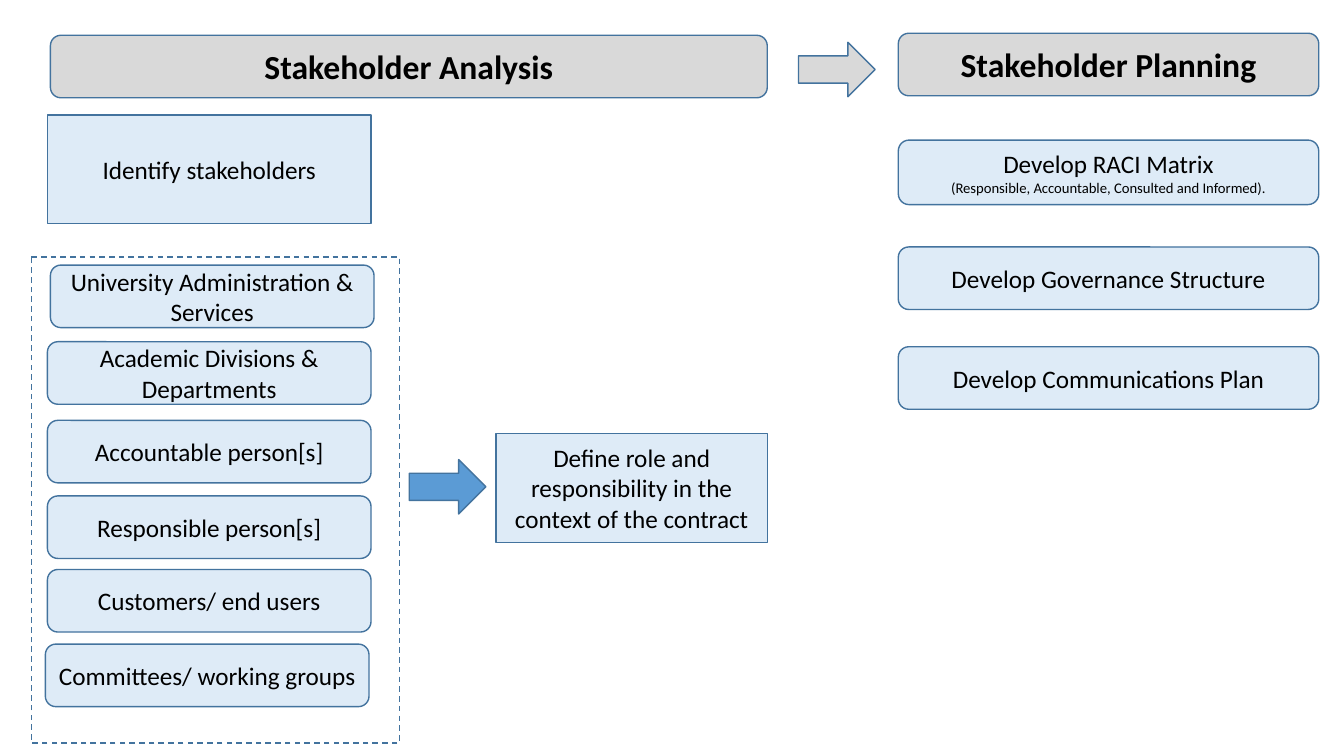
from dataclasses import dataclass

import pptx
import pptx.dml.color
import pptx.enum.dml
import pptx.enum.shapes
import pptx.enum.text
import pptx.util

PX = 9144  # EMU in one px, at 100 px to the inch
SHAPE = pptx.enum.shapes.MSO_SHAPE
FONT = "Calibri"
BLACK, OUTLINE = "000000", "43739E"
PALE_BLUE, BLUE, GREY = "DEEBF7", "5B9BD5", "D9D9D9"

GROUP_WIDTH, BAR_HEIGHT = 321, 62
PLANNING_LEFT, PLANNING_WIDTH = 891, 417
ARROW_WIDTH, ARROW_HEIGHT = 76, 54


@dataclass(frozen=True)
class Box:
    left: int
    top: int
    width: int
    height: int = BAR_HEIGHT
    text: str = ""
    note: str = ""
    kind: SHAPE = SHAPE.ROUNDED_RECTANGLE
    fill: str | None = PALE_BLUE
    size: int = 18
    bold: bool = False
    dashed: bool = False


def heading(left: int, top: int, width: int, text: str) -> Box:
    return Box(left, top, width, text=text, fill=GREY, size=24, bold=True)


def process(left: int, top: int, width: int, text: str) -> Box:
    return Box(left, top, width, 108, text, kind=SHAPE.FLOWCHART_PROCESS)


def arrow(left: int, top: int, fill: str) -> Box:
    return Box(left, top, ARROW_WIDTH, ARROW_HEIGHT, kind=SHAPE.RIGHT_ARROW, fill=fill)


def group(left: int, top: int, text: str) -> Box:
    """Describe one bar in the list of stakeholder groups."""
    return Box(left, top, GROUP_WIDTH, text=text)


def plan(top: int, text: str, note: str = "", height: int = BAR_HEIGHT) -> Box:
    """Describe one bar in the planning column."""
    return Box(PLANNING_LEFT, top, PLANNING_WIDTH, height, text, note)


BOXES = [
    Box(31, 255, 365, 482, kind=SHAPE.FLOWCHART_PROCESS, fill=None, dashed=True),
    process(47, 114, GROUP_WIDTH, "Identify stakeholders"),
    process(492, 430, 269, "Define role and responsibility in the context of the contract"),
    arrow(406, 456, BLUE),
    group(50, 263, "University Administration & Services"),
    group(47, 339, "Academic Divisions & Departments"),
    group(47, 417, "Accountable person[s]"),
    group(47, 492, "Responsible person[s]"),
    group(47, 565, "Customers/ end users"),
    group(45, 639, "Committees/ working groups"),
    heading(50, 35, 711, "Stakeholder Analysis"),
    arrow(792, 42, GREY),
    heading(PLANNING_LEFT, 33, PLANNING_WIDTH, "Stakeholder Planning"),
    plan(139, "Develop RACI Matrix",
         "(Responsible, Accountable, Consulted and Informed).", height=64),
    plan(245, "Develop Governance Structure"),
    plan(344, "Develop Communications Plan"),
]


def rgb(colour: str) -> pptx.dml.color.RGBColor:
    return pptx.dml.color.RGBColor.from_string(colour)


def write_paragraph(para, text: str, size: float, bold: bool) -> None:
    para.text = text
    para.alignment = pptx.enum.text.PP_ALIGN.CENTER
    para.font.name = FONT
    para.font.size = pptx.util.Pt(size)
    para.font.bold = bold
    para.font.color.rgb = rgb(BLACK)


def draw_box(page, box: Box) -> None:
    shape = page.shapes.add_shape(
        box.kind, *(PX * px for px in (box.left, box.top, box.width, box.height)))
    shape.shadow.inherit = False
    if box.fill is None:
        shape.fill.background()
    else:
        shape.fill.solid()
        shape.fill.fore_color.rgb = rgb(box.fill)
    shape.line.color.rgb = rgb(OUTLINE)
    shape.line.width = pptx.util.Pt(1)
    if box.dashed:
        shape.line.dash_style = pptx.enum.dml.MSO_LINE.DASH
    if box.text:
        frame = shape.text_frame
        frame.word_wrap = True
        frame.vertical_anchor = pptx.enum.text.MSO_ANCHOR.MIDDLE
        write_paragraph(frame.paragraphs[0], box.text, box.size, box.bold)
        if box.note:
            write_paragraph(frame.add_paragraph(), box.note, 10.5, False)


def main() -> None:
    deck = pptx.Presentation()
    deck.slide_width, deck.slide_height = 1333 * PX, 750 * PX
    page = deck.slides.add_slide(deck.slide_layouts[6])
    for box in BOXES:
        draw_box(page, box)
    deck.save("out.pptx")


if __name__ == "__main__":
    main()
